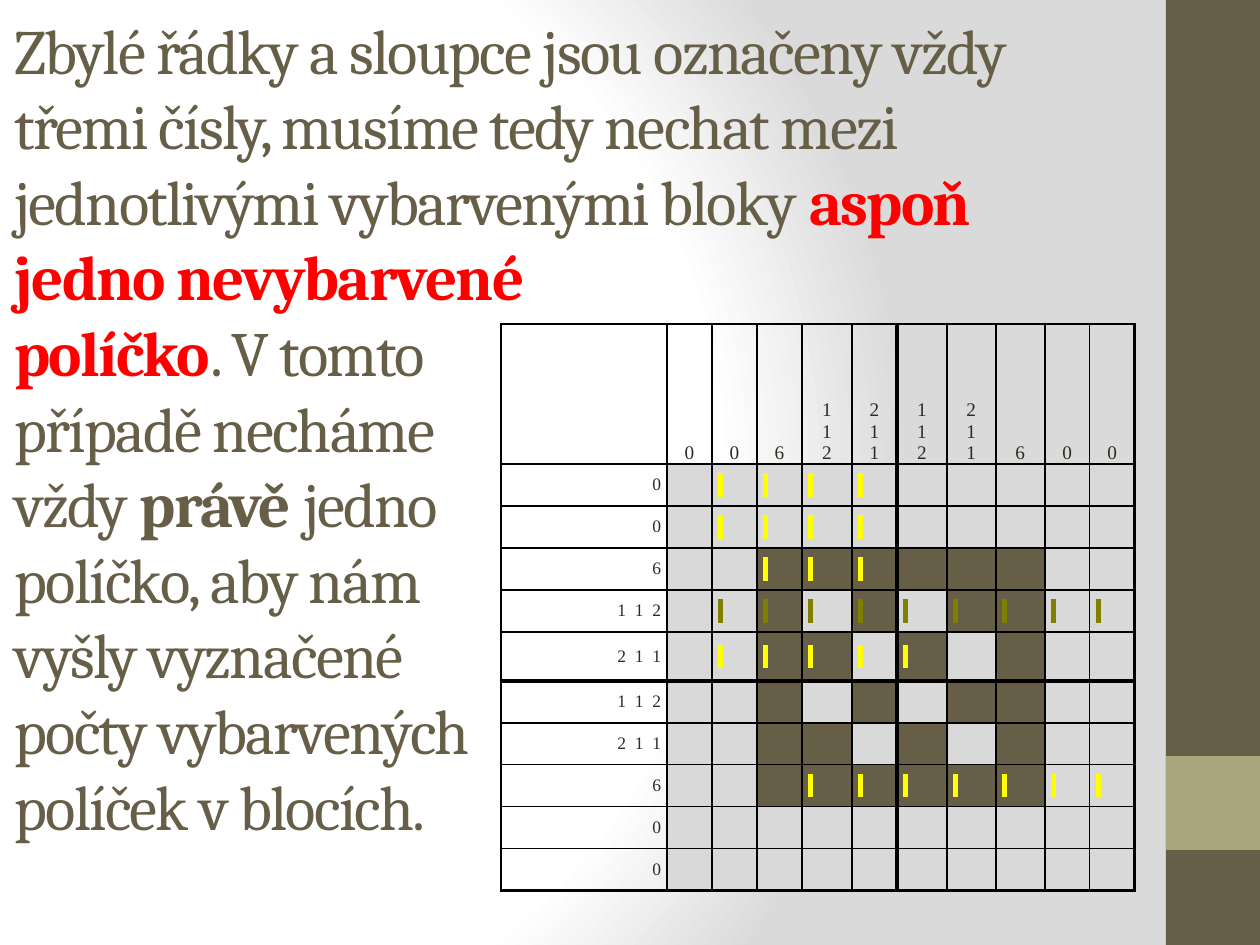
"""Build the nonogram slide: explanatory title, puzzle table and side bars."""
from lxml import etree
from pptx import Presentation
from pptx.dml.color import RGBColor
from pptx.enum.text import MSO_ANCHOR, MSO_AUTO_SIZE, PP_ALIGN
from pptx.enum.shapes import MSO_SHAPE
from pptx.oxml import parse_xml
from pptx.oxml.ns import nsdecls, qn
from pptx.util import Pt

LEFT, CENTER, RIGHT = PP_ALIGN.LEFT, PP_ALIGN.CENTER, PP_ALIGN.RIGHT
BOTTOM, MIDDLE = MSO_ANCHOR.BOTTOM, MSO_ANCHOR.MIDDLE
PX = 914400 // 126

THEME = {
    "brown": "675E47", "sand": "A9A57C", "red": "FF0000", "ink": "2F2B20",
    "empty": "D9D9D9", "line": "000000", "yellow": "FFFF00", "olive": "808000",
    "bg": [(0, "FFFFFF"), (75, "FFFFFF"), (100, "DADADA")],
    "title_font": "Cambria", "table_font": "Times New Roman",
    "title": 36, "column_clue": 11, "row_clue": 10, "mark": 12,
}

TITLE = [
    ("Zbylé řádky a sloupce jsou označeny vždy třemi čísly, musíme tedy nechat "
     "mezi jednotlivými vybarvenými bloky ", "brown", False),
    ("aspoň jedno nevybarvené\vpolíčko", "red", True),
    (". V tomto \vpřípadě necháme \vvždy ", "brown", False),
    ("právě", "brown", True),
    (" jedno \vpolíčko, aby nám \vvyšly vyznačené \vpočty vybarvených "
     "\vpolíček v blocích.", "brown", False),
]
TITLE_BOX = (2, -10, 1141, 859)
SIDE_BARS = [((1166, 0, 94, 945), "brown"), ((1166, 756, 94, 94), "sand")]

COLUMN_CLUES = ["0", "0", "6", "112", "211", "112", "211", "6", "0", "0"]
ROW_CLUES = ["0", "0", "6", "112", "211", "112", "211", "6", "0", "0"]
PUZZLE = [
    "..........",
    "..........",
    "..######..",
    "..#.#.##..",
    "..##.#.#..",
    "..#.#.##..",
    "..##.#.#..",
    "..######..",
    "..........",
    "..........",
]
MARKS = {1: (2, 5, "yellow"), 2: (2, 5, "yellow"), 3: (3, 5, "yellow"),
         4: (2, 10, "olive"), 5: (2, 6, "yellow"), 8: (4, 10, "yellow")}
TABLE_AT = (501, 324)
COLUMN_WIDTHS = [166, 45, 45, 45, 50, 45, 50, 49, 49, 45, 45]
ROW_HEIGHTS = [140] + [42] * 4 + [49] + [42] * 5
GRID_LINES = {1: 1.5, 6: 2.25, 11: 2.25}


def rgb(name):
    return RGBColor.from_string(THEME[name])


def emu(box):
    return [v * PX for v in box]


def add_text(p, text, size, font, color, bold=False, spacing=None, highlight=None):
    for i, part in enumerate(text.split("\v")):
        if i:
            p.add_line_break()
        r = p.add_run()
        r.text = part
        r.font.size, r.font.name, r.font.bold = Pt(THEME[size]), THEME[font], bold
        r.font.color.rgb = rgb(color)
        rPr = r._r.get_or_add_rPr()
        if spacing:
            rPr.set("spc", str(spacing))
        if highlight:
            mark = etree.Element(qn("a:highlight"))
            etree.SubElement(mark, qn("a:srgbClr"), val=THEME[highlight])
            rPr.find(qn("a:latin")).addprevious(mark)
    for br in p._p.findall(qn("a:br")):
        if br.find(qn("a:rPr")) is None:
            etree.SubElement(br, qn("a:rPr"), sz=str(THEME[size] * 100))


def set_borders(cell, row, col):
    sides = {"L": col, "R": col + 1, "T": row, "B": row + 1}
    tcPr = cell._tc.get_or_add_tcPr()
    for i, (side, line) in enumerate(sides.items()):
        width = Pt(GRID_LINES.get(line, 1))
        tcPr.insert(i, parse_xml(
            f'<a:ln{side} {nsdecls("a")} w="{width}"><a:solidFill>'
            f'<a:srgbClr val="{THEME["line"]}"/></a:solidFill></a:ln{side}>'))


def set_background(s):
    s.background.fill.gradient()
    grad = s.element.find(".//" + qn("a:gradFill"))
    stops = "".join(f'<a:gs pos="{pos * 1000}"><a:srgbClr val="{c}"/></a:gs>'
                    for pos, c in THEME["bg"])
    grad.getparent().replace(grad, parse_xml(
        f'<a:gradFill {nsdecls("a")} rotWithShape="1"><a:gsLst>{stops}</a:gsLst>'
        '<a:path path="circle"><a:fillToRect l="20000" t="50000" r="100000" '
        'b="50000"/></a:path></a:gradFill>'))


def add_bars(s):
    for box, color in SIDE_BARS:
        sp = s.shapes.add_shape(MSO_SHAPE.RECTANGLE, *emu(box))
        sp.shadow.inherit = False
        sp.fill.solid()
        sp.fill.fore_color.rgb = rgb(color)
        sp.line.fill.background()


def fill_title(s):
    sp = s.shapes.title
    sp.left, sp.top, sp.width, sp.height = emu(TITLE_BOX)
    tf = sp.text_frame
    tf.word_wrap, tf.auto_size = True, MSO_AUTO_SIZE.NONE
    tf.vertical_anchor = BOTTOM
    p = tf.paragraphs[0]
    p.alignment = LEFT
    for text, color, bold in TITLE:
        add_text(p, text, "title", "title_font", color, bold=bold, spacing=-100)


def fill_cell(cell, row, col):
    cell.margin_left = cell.margin_right = 6 * PX
    cell.margin_top = cell.margin_bottom = 0
    cell.vertical_anchor = MIDDLE if row else BOTTOM
    set_borders(cell, row, col)
    tf = cell.text_frame
    if row and col:
        cell.fill.solid()
        filled = PUZZLE[row - 1][col - 1] == "#"
        cell.fill.fore_color.rgb = rgb("brown" if filled else "empty")
        first, last, color = MARKS.get(row, (0, 0, None))
        if first <= col <= last:
            add_text(tf.paragraphs[0], "\u00a0", "mark", "table_font", color,
                     highlight=color)
        return
    cell.fill.background()
    if col:
        for i, digit in enumerate(COLUMN_CLUES[col - 1]):
            p = tf.add_paragraph() if i else tf.paragraphs[0]
            p.alignment = CENTER
            add_text(p, digit, "column_clue", "table_font", "ink")
    elif row:
        p = tf.paragraphs[0]
        p.alignment = RIGHT
        add_text(p, "  ".join(ROW_CLUES[row - 1]), "row_clue", "table_font", "ink")


def add_puzzle(s):
    box = (*TABLE_AT, sum(COLUMN_WIDTHS), sum(ROW_HEIGHTS))
    table = s.shapes.add_table(len(ROW_HEIGHTS), len(COLUMN_WIDTHS), *emu(box)).table
    table.first_row = table.horz_banding = False
    for column, width in zip(table.columns, COLUMN_WIDTHS):
        column.width = width * PX
    for row, height in enumerate(ROW_HEIGHTS):
        table.rows[row].height = height * PX
        for col in range(len(COLUMN_WIDTHS)):
            fill_cell(table.cell(row, col), row, col)


def main():
    prs = Presentation()
    prs.slide_width, prs.slide_height = emu((1260, 945))
    s = prs.slides.add_slide(prs.slide_layouts[5])
    set_background(s)
    add_bars(s)
    fill_title(s)
    add_puzzle(s)
    prs.save("out.pptx")


if __name__ == "__main__":
    main()
